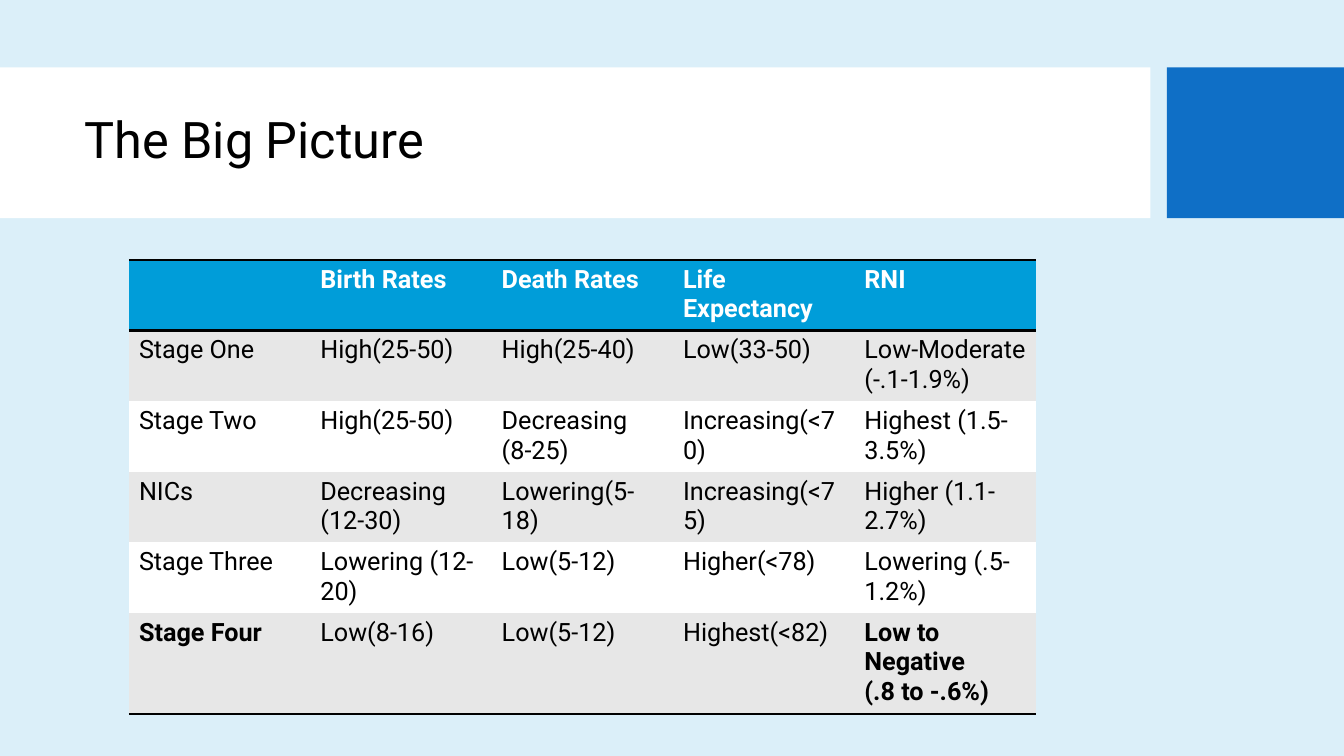
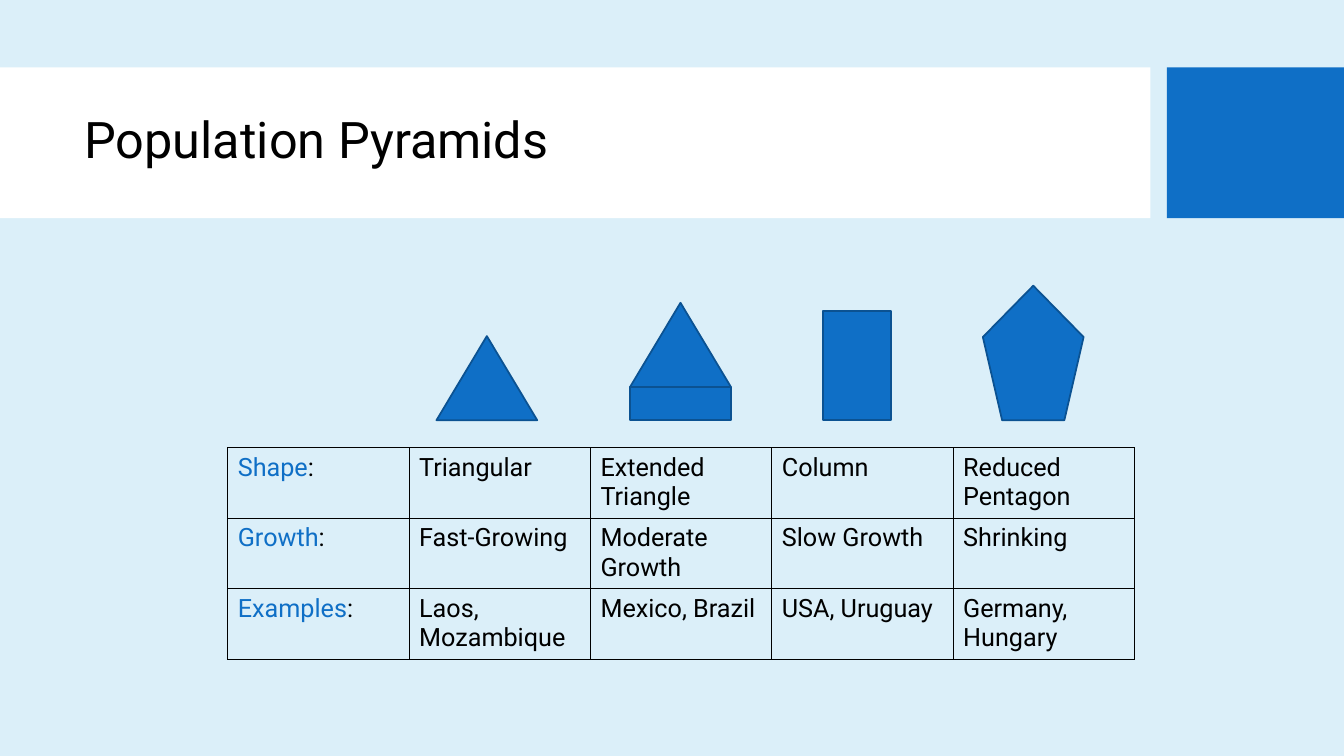
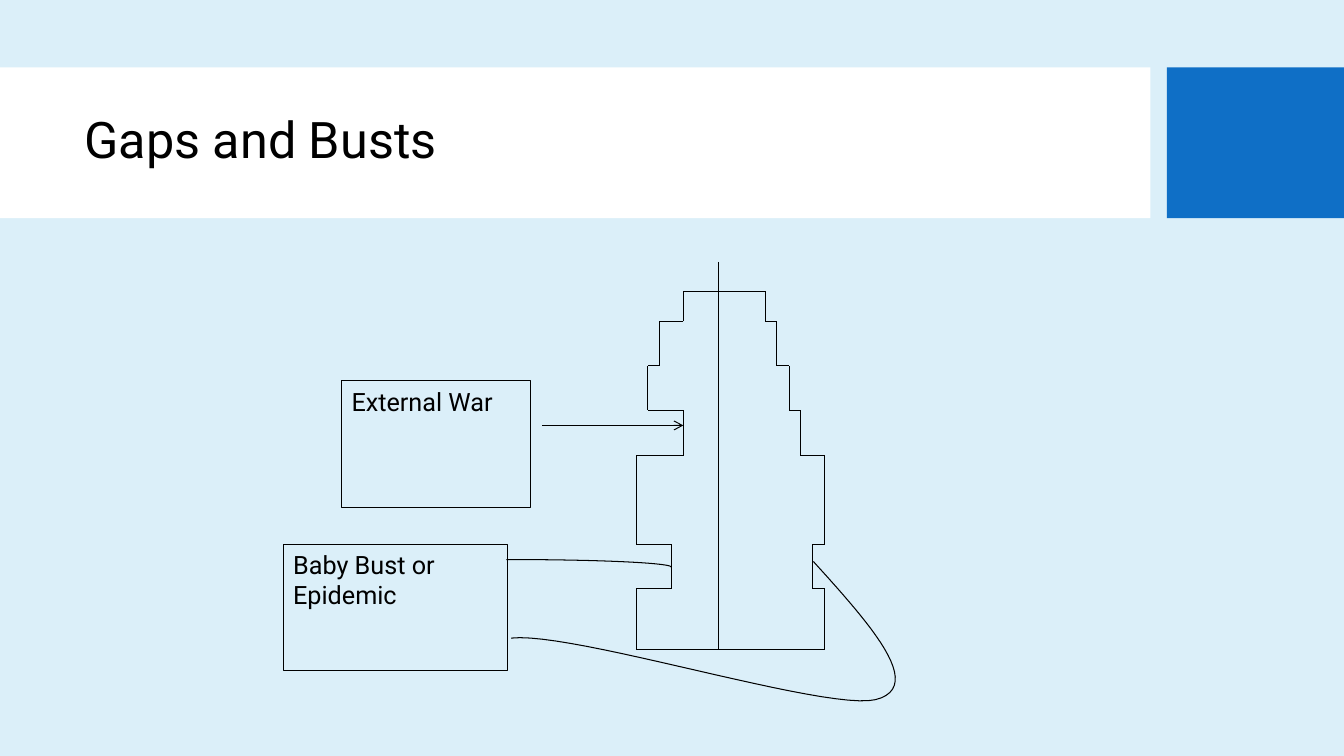
import itertools

import pptx
import pptx.dml.color
import pptx.enum.shapes
import pptx.enum.text
import pptx.oxml
import pptx.oxml.ns
import pptx.util

Cm = pptx.util.Cm
Pt = pptx.util.Pt
qn = pptx.oxml.ns.qn
MSO = pptx.enum.shapes.MSO_SHAPE

NO_GRID_STYLE = "{2D5ABB26-0587-4C30-8999-92F81FD0307C}"


def rgb(value):
    return pptx.dml.color.RGBColor.from_string(value)


def bezier(p0, p1, p2, p3, steps=24):
    for i in range(steps + 1):
        t = i / steps
        u = 1 - t
        yield tuple(
            u**3 * a + 3 * u * u * t * b + 3 * u * t * t * c + t**3 * d
            for a, b, c, d in zip(p0, p1, p2, p3)
        )


class Deck:
    font = "Roboto"
    sky, white, black = "DBEFF9", "FFFFFF", "000000"
    blue, navy = "0F6FC6", "0B5292"
    header, stripe = "009DD9", "E7E7E7"
    column = 4.57

    def __init__(self):
        self.prs = pptx.Presentation()
        self.prs.slide_width = Cm(33.87)
        self.prs.slide_height = Cm(19.05)
        self.s = None

    def slide(self, title):
        self.s = self.prs.slides.add_slide(self.prs.slide_layouts[6])
        fill = self.s.background.fill
        fill.solid()
        fill.fore_color.rgb = rgb(self.sky)
        self.shape(MSO.RECTANGLE, 0, 1.7, 28.99, 3.8, self.white)
        self.shape(MSO.RECTANGLE, 29.41, 1.7, 4.46, 3.8, self.blue)
        sp = self.s.shapes.add_textbox(Cm(1.88), Cm(2.08), Cm(26.7), Cm(3))
        tf = sp.text_frame
        tf.word_wrap = True
        tf.vertical_anchor = pptx.enum.text.MSO_ANCHOR.MIDDLE
        tf.text = title
        tf.paragraphs[0].line_spacing = 0.9
        self.style(tf.paragraphs[0], size=36)

    def style(self, p, color=black, size=18, bold=False):
        for r in p.runs:
            r.font.name = self.font
            r.font.size = Pt(size)
            r.font.bold = bold
            r.font.color.rgb = rgb(color)

    def paint(self, sp, fill=None, line=None, width=0.75):
        sp.shadow.inherit = False
        if fill:
            sp.fill.solid()
            sp.fill.fore_color.rgb = rgb(fill)
        else:
            sp.fill.background()
        if line:
            sp.line.color.rgb = rgb(line)
            sp.line.width = Pt(width)
        else:
            sp.line.fill.background()

    def shape(self, kind, x, y, w, h, fill=None, line=None, width=0.75):
        sp = self.s.shapes.add_shape(kind, Cm(x), Cm(y), Cm(w), Cm(h))
        self.paint(sp, fill, line, width)
        return sp

    def box(self, text, x, y, w, h):
        sp = self.shape(MSO.RECTANGLE, x, y, w, h, line=self.black)
        tf = sp.text_frame
        tf.word_wrap = True
        tf.vertical_anchor = pptx.enum.text.MSO_ANCHOR.TOP
        tf.text = text
        tf.paragraphs[0].alignment = pptx.enum.text.PP_ALIGN.LEFT
        self.style(tf.paragraphs[0])

    def line(self, start, end, arrow=False):
        kind = pptx.enum.shapes.MSO_CONNECTOR.STRAIGHT
        cx = self.s.shapes.add_connector(kind, *map(Cm, start + end))
        cx.line.color.rgb = rgb(self.black)
        cx.line.width = Pt(0.75)
        sp_pr = cx.element.spPr
        sp_pr.append(pptx.oxml.parse_xml(
            f"<a:effectLst {pptx.oxml.ns.nsdecls('a')}/>"))
        if arrow:
            sp_pr.find(qn("a:ln")).append(pptx.oxml.parse_xml(
                f"<a:tailEnd {pptx.oxml.ns.nsdecls('a')} type='arrow'/>"))

    def curve(self, points):
        points = [(Cm(x), Cm(y)) for x, y in points]
        builder = self.s.shapes.build_freeform(*points[0])
        builder.add_line_segments(points[1:], close=False)
        self.paint(builder.convert_to_shape(), line=self.black)

    def table(self, rows, x, y, heights):
        gf = self.s.shapes.add_table(
            len(rows), len(rows[0]), Cm(x), Cm(y),
            Cm(self.column * len(rows[0])), Cm(sum(heights)))
        for style_id in gf.element.iter(qn("a:tableStyleId")):
            style_id.text = NO_GRID_STYLE
        table = gf.table
        table.first_row = table.horz_banding = False
        for col in table.columns:
            col.width = Cm(self.column)
        for row, height, texts in zip(table.rows, heights, rows):
            row.height = Cm(height)
            for cell, text in zip(row.cells, texts):
                cell.text = text
                self.style(cell.text_frame.paragraphs[0])
        return table

    def cell(self, cell, sides="", width=1, fill=None):
        tc_pr = cell._tc.get_or_add_tcPr()
        for side in sides:
            tc_pr.append(pptx.oxml.parse_xml(
                f"<a:ln{side} {pptx.oxml.ns.nsdecls('a')} w='{Pt(width)}'>"
                f"<a:solidFill><a:srgbClr val='{self.black}'/></a:solidFill>"
                f"</a:ln{side}>"))
        if fill:
            cell.fill.solid()
            cell.fill.fore_color.rgb = rgb(fill)
        else:
            cell.fill.background()


def big_picture(deck):
    deck.slide("The Big Picture")
    rows = [
        ("", "Birth Rates", "Death Rates", "Life Expectancy", "RNI"),
        ("Stage One", "High(25-50)", "High(25-40)", "Low(33-50)",
         "Low-Moderate (-.1-1.9%)"),
        ("Stage Two", "High(25-50)", "Decreasing (8-25)", "Increasing(<70)",
         "Highest (1.5-3.5%)"),
        ("NICs", "Decreasing (12-30)", "Lowering(5-18)", "Increasing(<75)",
         "Higher (1.1-2.7%)"),
        ("Stage Three", "Lowering (12-20)", "Low(5-12)", "Higher(<78)",
         "Lowering (.5-1.2%)"),
        ("Stage Four", "Low(8-16)", "Low(5-12)", "Highest(<82)",
         "Low to Negative\v(.8 to -.6%)"),
    ]
    table = deck.table(rows, 3.25, 6.55, [1.75] * 5 + [2.49])
    last = len(rows) - 1
    for i, row in enumerate(table.rows):
        for j, cell in enumerate(row.cells):
            p = cell.text_frame.paragraphs[0]
            if i == 0:
                deck.cell(cell, "TB", 2, deck.header)
                deck.style(p, deck.white, bold=True)
            else:
                fill = deck.stripe if i % 2 else deck.white
                deck.cell(cell, "B" if i == last else "", 2, fill)
                deck.style(p, bold=i == last and j in (0, 4))


def population_pyramids(deck):
    deck.slide("Population Pyramids")
    rows = [
        ("Shape", "Triangular", "Extended Triangle", "Column",
         "Reduced Pentagon"),
        ("Growth", "Fast-Growing", "Moderate Growth", "Slow Growth",
         "Shrinking"),
        ("Examples", "Laos, Mozambique", "Mexico, Brazil", "USA, Uruguay",
         "Germany, Hungary"),
    ]
    table = deck.table(rows, 5.74, 11.28, [1.75] * 3)
    for row in table.rows:
        for cell in row.cells:
            deck.cell(cell, "LRTB")
        p = row.cells[0].text_frame.paragraphs[0]
        p.add_run().text = ":"
        deck.style(p)
        p.runs[0].font.color.rgb = rgb(deck.blue)

    base, foot = 10.59, 0.84
    for kind, x, w, h, bottom in [
        (MSO.ISOSCELES_TRIANGLE, 11, 2.54, 2.12, base),
        (MSO.RECTANGLE, 15.88, 2.54, foot, base),
        (MSO.ISOSCELES_TRIANGLE, 15.88, 2.54, 2.12, base - foot),
        (MSO.RECTANGLE, 20.75, 1.7, 2.75, base),
        (MSO.REGULAR_PENTAGON, 24.77, 2.54, 3.39, base),
    ]:
        deck.shape(kind, x, bottom - h, w, h, deck.blue, deck.navy, 1.25)


def gaps_and_busts(deck):
    deck.slide("Gaps and Busts")
    axis = 18.11
    levels = [7.34, 8.1, 9.22, 10.34, 11.48, 13.72, 14.83, 16.36]
    left = [17.22, 16.61, 16.33, 17.22, 16.03, 16.92, 16.03]
    right = [19.28, 19.58, 19.89, 20.17, 20.78, 20.47, 20.78]
    deck.line((axis, 6.6), (axis, levels[-1]))
    for side in (left, right):
        outline = [(axis, levels[0])]
        for x, top, bottom in zip(side, levels, levels[1:]):
            outline += [(x, top), (x, bottom)]
        outline.append((axis, levels[-1]))
        for start, end in itertools.pairwise(outline):
            deck.line(start, end)

    deck.shape(MSO.ARC, 8.61, 14.1, 8.31, 0.38, line=deck.black)
    turn = (22.07, 17.63)
    deck.curve([
        *bezier((20.5, 14.15), (21.92, 15.72), (23.34, 17.3), turn),
        *bezier(turn, (20.8, 17.93), (14.43, 15.9), (12.88, 16.08)),
    ])
    deck.box("Baby Bust or Epidemic", 7.14, 13.72, 5.64, 3.18)
    deck.line((13.67, 10.72), (17.22, 10.72), arrow=True)
    deck.box("External War", 8.61, 9.6, 4.75, 3.18)


def main():
    deck = Deck()
    big_picture(deck)
    population_pyramids(deck)
    gaps_and_busts(deck)
    deck.prs.save("out.pptx")


if __name__ == "__main__":
    main()
